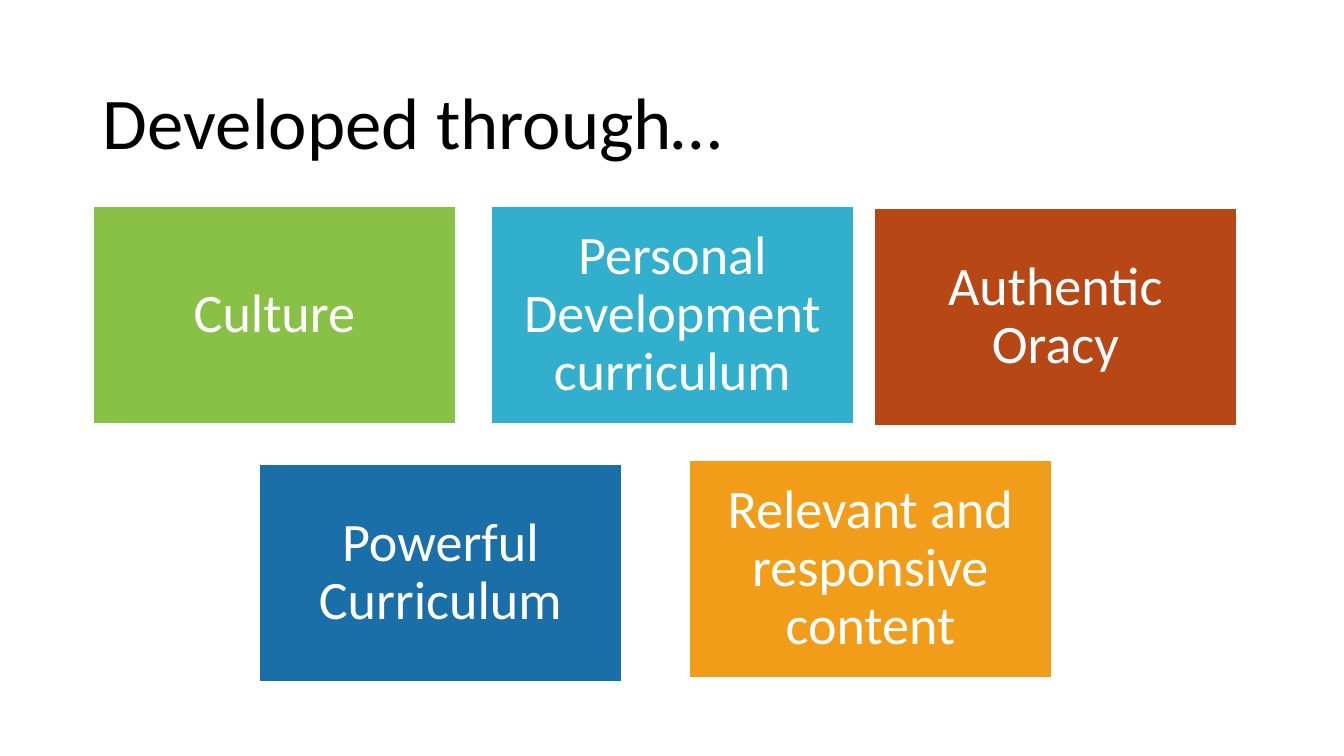
"""Build the "Developed through…" slide with five coloured theme cards."""
from pptx import Presentation
from pptx.dml.color import RGBColor
from pptx.enum.shapes import MSO_SHAPE
from pptx.enum.text import MSO_ANCHOR, PP_ALIGN
from pptx.util import Pt

RECTANGLE = MSO_SHAPE.RECTANGLE
MIDDLE = MSO_ANCHOR.MIDDLE
LEFT, CENTER = PP_ALIGN.LEFT, PP_ALIGN.CENTER

EMU_PER_PX = 914400 / 134.4
SLIDE_SIZE = (1344, 756)
CARD_SIZE = (363, 218)
COLORS = {
    "black": "000000",
    "white": "FFFFFF",
    "green": "88C145",
    "cyan": "33AFCE",
    "blue": "1A6FA9",
    "rust": "B74816",
    "orange": "F19D19",
}
CARDS = [
    ("Culture", 93, 206, "green"),
    ("Personal Development curriculum", 491, 206, "cyan"),
    ("Powerful Curriculum", 259, 464, "blue"),
    ("Authentic Oracy", 874, 208, "rust"),
    ("Relevant and responsive content", 689, 460, "orange"),
]


def px(length):
    return round(length * EMU_PER_PX)


def color(name):
    return RGBColor.from_string(COLORS[name])


def write(frame, text, *, size, ink, font, align=LEFT, inset=(10, 5)):
    frame.word_wrap = True
    frame.vertical_anchor = MIDDLE
    frame.margin_left = frame.margin_right = px(inset[0])
    frame.margin_top = frame.margin_bottom = px(inset[1])
    paragraph = frame.paragraphs[0]
    paragraph.alignment = align
    paragraph.line_spacing = 0.9
    run = paragraph.add_run()
    run.text = text
    run.font.name = font
    run.font.size = Pt(size)
    run.font.color.rgb = color(ink)


class SlideBuilder:
    font = "Calibri"
    title_size = 39
    card_text_size = 29

    def __init__(self, slide):
        self.slide = slide

    def title(self, text, left, top, width, height):
        heading = self.slide.shapes.add_textbox(*map(px, (left, top, width, height)))
        write(heading.text_frame, text, size=self.title_size, ink="black", font=self.font)

    def card(self, text, left, top, fill):
        card = self.slide.shapes.add_shape(RECTANGLE, *map(px, (left, top, *CARD_SIZE)))
        card.shadow.inherit = False
        card.fill.solid()
        card.fill.fore_color.rgb = color(fill)
        card.line.color.rgb = color("white")
        card.line.width = Pt(1)
        write(card.text_frame, text, size=self.card_text_size, ink="white",
              font=self.font, align=CENTER, inset=(16, 16))


def main():
    deck = Presentation()
    deck.slide_width, deck.slide_height = map(px, SLIDE_SIZE)
    builder = SlideBuilder(deck.slides.add_slide(deck.slide_layouts[6]))
    builder.title("Developed through…", 93, 63, 1159, 125)
    for theme, left, top, fill in CARDS:
        builder.card(theme, left, top, fill)
    deck.save("out.pptx")


if __name__ == "__main__":
    main()
